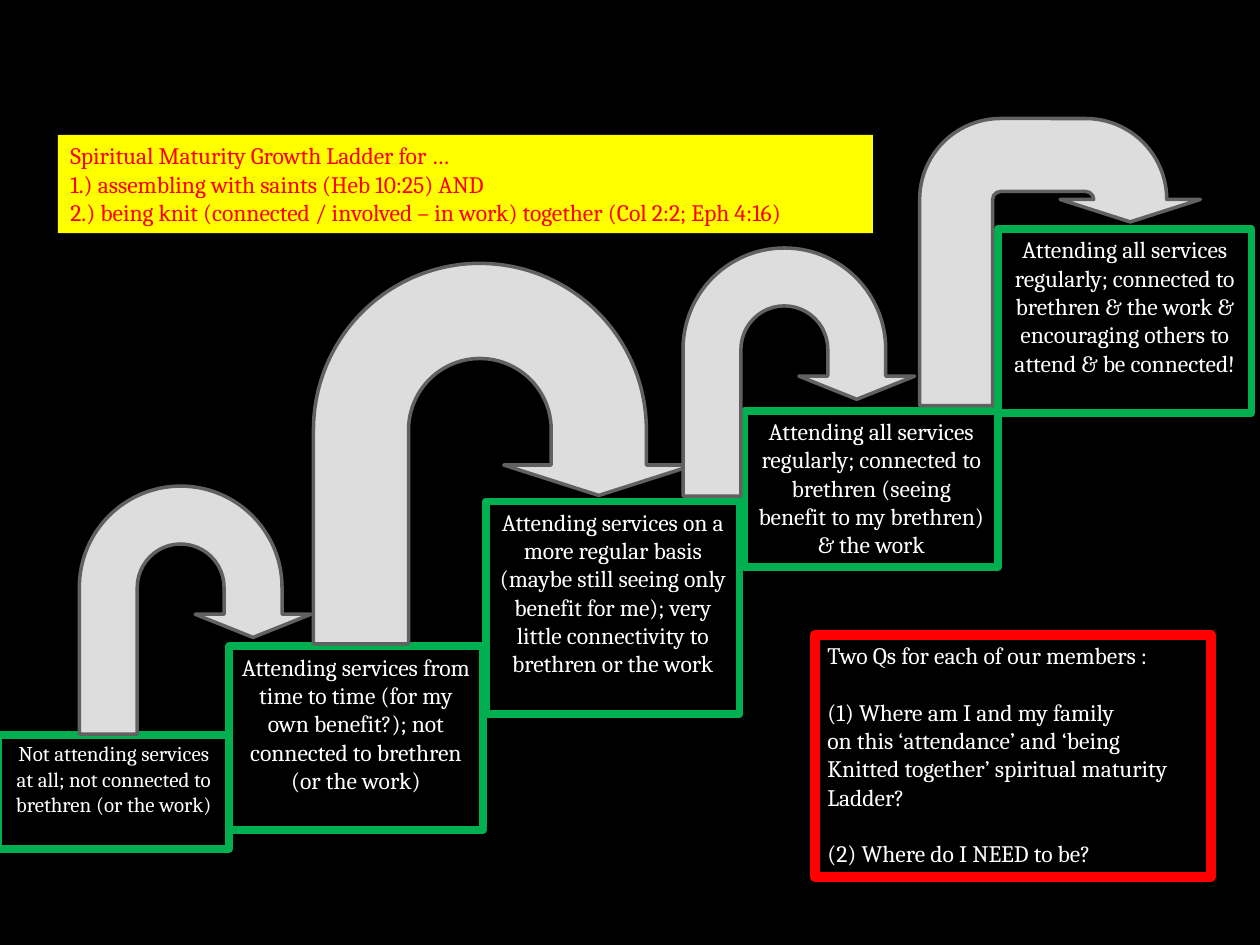
from pptx import Presentation
from pptx.dml.color import RGBColor
from pptx.enum.shapes import MSO_SHAPE
from pptx.enum.text import PP_ALIGN
from pptx.util import Cm, Pt

COLORS = {
    "background": "000000", "text": "FFFFFF", "step": "00B050",
    "title": "FF0000", "title_fill": "FFFF00", "questions": "FF0000",
    "arrow": "DDDDDD", "arrow_line": "616161",
}
FONT = "Cambria"
TEXT_SIZE = 13.5
BLANK_LINE = 16  # points, the gap between groups of lines

# Each group of lines is set apart from the one before it
TITLE = [[
    "Spiritual Maturity Growth Ladder for …",
    "1.) assembling with saints (Heb 10:25) AND",
    "2.) being knit (connected / involved – in work) together (Col 2:2; Eph 4:16)",
]]
QUESTIONS = [
    ["Two Qs for each of our members :"],
    ["(1) Where am I and my family",
     "on this ‘attendance’ and ‘being",
     "Knitted together’ spiritual maturity",
     "Ladder?"],
    ["(2) Where do I NEED to be?"],
]
# Text, (left, top, width, height) in cm, text size
STEPS = [
    ("Not attending services at all; not connected to brethren (or the work)",
     (-0.03, 14.81, 4.65, 2.31), 12),
    ("Attending services from time to time (for my own benefit?); "
     "not connected to brethren (or the work)",
     (4.62, 13.03, 5.11, 3.71), TEXT_SIZE),
    ("Attending services on a more regular basis (maybe still seeing only "
     "benefit for me); very little connectivity to brethren or the work",
     (9.8, 10.11, 5.11, 4.29), TEXT_SIZE),
    ("Attending all services regularly; connected to brethren "
     "(seeing benefit to my brethren) & the work",
     (15.01, 8.28, 5.11, 3.15), TEXT_SIZE),
    ("Attending all services regularly; connected to brethren & the work "
     "& encouraging others to attend & be connected!",
     (20.12, 4.62, 5.11, 3.71), TEXT_SIZE),
]
# (left, top, width, height) in cm, then the U-turn proportions
ARROWS = [
    ((1.6, 9.8, 4.67, 5), (0.25, 0.25, 0.1, 0.44, 0.61)),
    ((6.32, 5.31, 7.67, 7.67), (0.25, 0.25, 0.08, 0.44, 0.61)),
    ((13.77, 5, 4.67, 5), (0.25, 0.25, 0.1, 0.44, 0.61)),
    ((18.54, 2.39, 5.66, 5.79), (0.26, 0.25, 0.08, 0.44, 0.36)),
]


def rgb(name):
    return RGBColor.from_string(COLORS[name])


def paint(shape, fill=None, line=None, line_width=0):
    if fill:
        shape.fill.solid()
        shape.fill.fore_color.rgb = rgb(fill)
    if line:
        shape.line.color.rgb = rgb(line)
        shape.line.width = Pt(line_width)


def add_text(slide, groups, area, *, size=TEXT_SIZE, color="text",
             align=PP_ALIGN.LEFT, **look):
    box = slide.shapes.add_textbox(*map(Cm, area))
    paint(box, **look)
    frame = box.text_frame
    frame.word_wrap = True
    lines = [(line, group > 0 and index == 0)
             for group, members in enumerate(groups)
             for index, line in enumerate(members)]
    for number, (line, starts_group) in enumerate(lines):
        paragraph = frame.add_paragraph() if number else frame.paragraphs[0]
        paragraph.text = line
        paragraph.alignment = align
        if starts_group:
            paragraph.space_before = Pt(BLANK_LINE)
        font = paragraph.runs[0].font
        font.name, font.size = FONT, Pt(size)
        font.color.rgb = rgb(color)


def add_arrow(slide, area, proportions):
    arrow = slide.shapes.add_shape(MSO_SHAPE.U_TURN_ARROW, *map(Cm, area))
    arrow.shadow.inherit = False
    paint(arrow, fill="arrow", line="arrow_line", line_width=2)
    for index, proportion in enumerate(proportions):
        arrow.adjustments[index] = proportion


def main():
    presentation = Presentation()
    presentation.slide_width, presentation.slide_height = Cm(25.4), Cm(19.05)
    slide = presentation.slides.add_slide(presentation.slide_layouts[6])
    slide.background.fill.solid()
    slide.background.fill.fore_color.rgb = rgb("background")

    for text, area, size in STEPS:
        add_text(slide, [[text]], area, size=size, align=PP_ALIGN.CENTER,
                 line="step", line_width=4.5)
    add_text(slide, TITLE, (1.17, 2.72, 16.43, 1.98), color="title",
             fill="title_fill")
    for area, proportions in ARROWS:
        add_arrow(slide, area, proportions)
    add_text(slide, QUESTIONS, (16.43, 12.8, 7.98, 4.88),
             line="questions", line_width=6)

    presentation.save("out.pptx")


if __name__ == "__main__":
    main()
